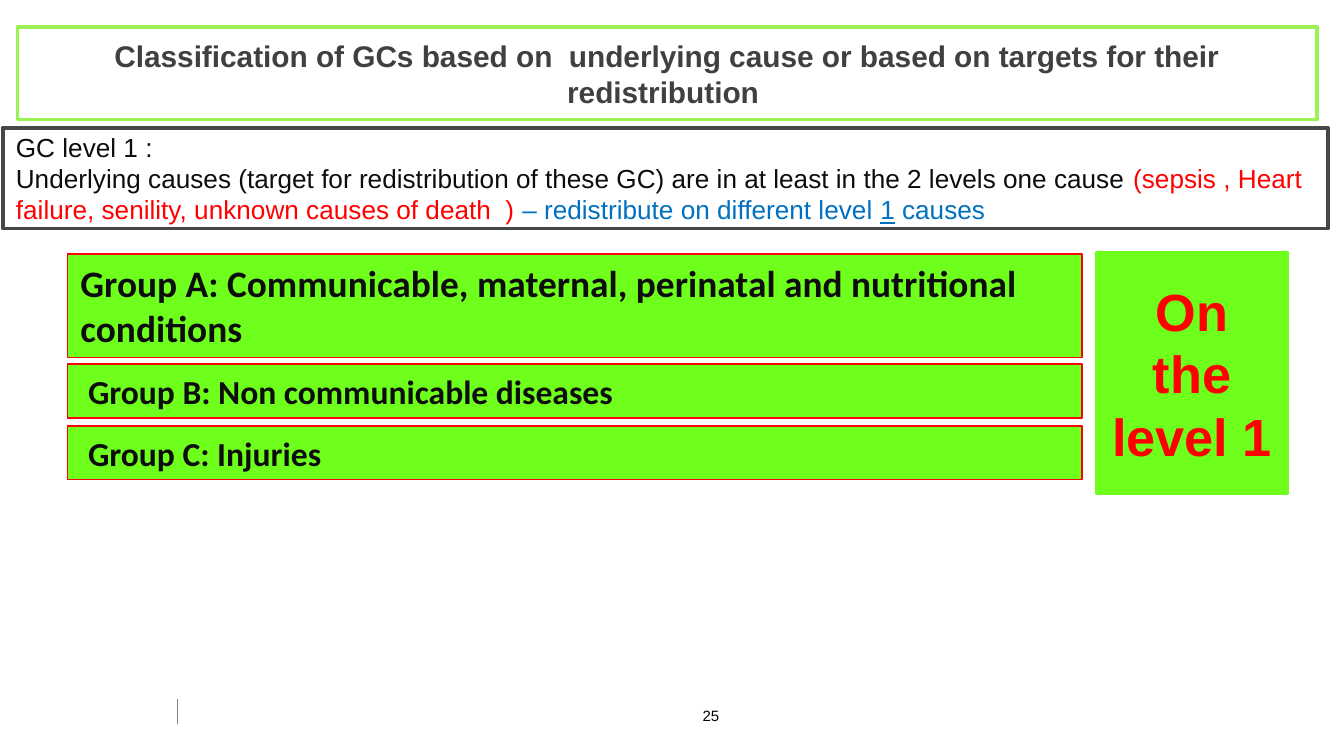
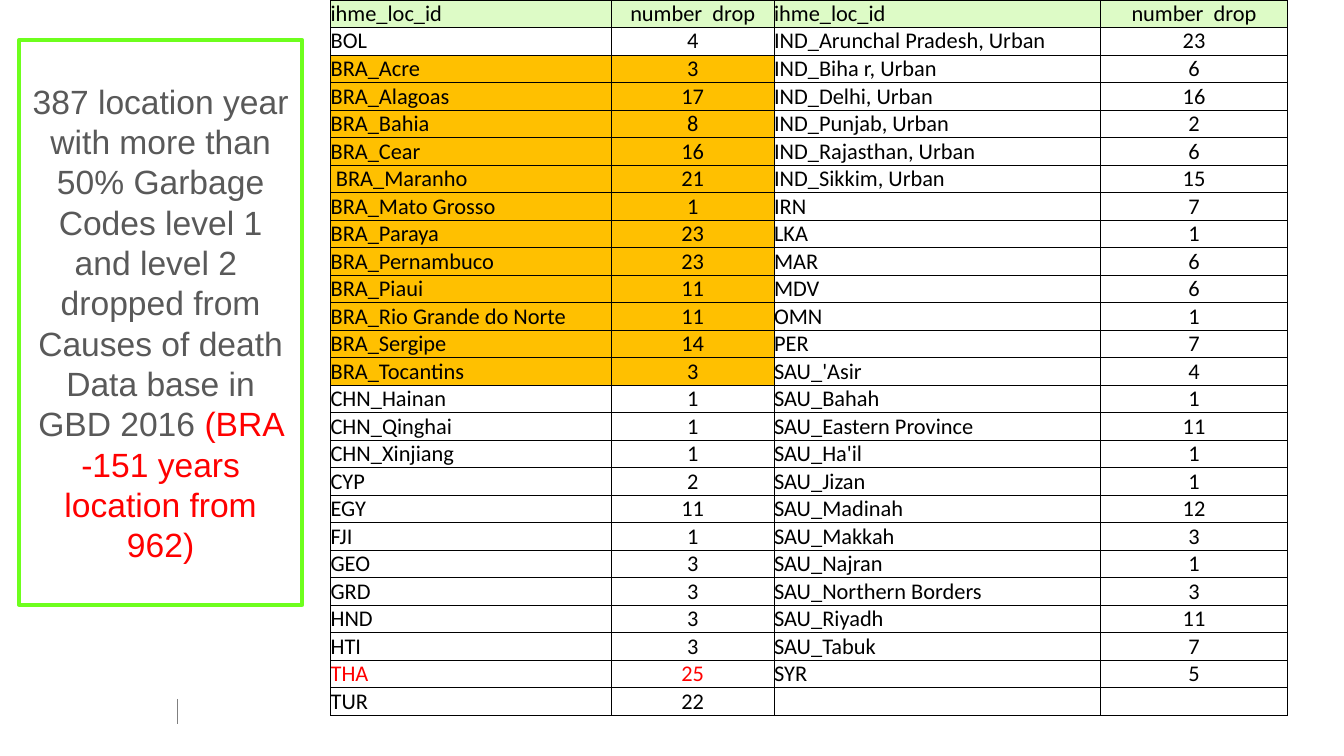
from dataclasses import dataclass
from itertools import zip_longest

from lxml import etree
from pptx import Presentation
from pptx import util as u
from pptx.dml.color import RGBColor
from pptx.enum import shapes, text
from pptx.oxml import ns

PX = 4572
WHITE, BLACK, INK, RED = "FFFFFF", "000000", "0D0D0D", "FF0000"
LIME, GOLD, MINT, BLUE = "6EFF1D", "FFC000", "DDFBC6", "0070C0"
LEFT, MID = text.PP_ALIGN.LEFT, text.PP_ALIGN.CENTER
TOP, CORE, BASE = (text.MSO_ANCHOR.TOP, text.MSO_ANCHOR.MIDDLE,
                   text.MSO_ANCHOR.BOTTOM)


@dataclass(frozen=True)
class Run:
    words: str
    hue: str = ""
    under: bool = False


@dataclass(frozen=True)
class Box:
    left: int
    top: int
    width: int
    height: int
    fill: str
    edge: str
    weight: float = 2


@dataclass(frozen=True)
class Group:
    words: str
    top: int
    height: int
    size: int
    inset: int


GROUPS = [
    Group("Group A: Communicable, maternal, perinatal and nutritional conditions",
          378, 154, 20, 20),
    Group("Group B: Non communicable diseases", 542, 80, 18, 31),
    Group("Group C: Injuries", 634, 80, 18, 31),
]

HEAD = ("ihme_loc_id", "number  drop")
FIRST = [
    ("BOL", 4), ("BRA_Acre", 3), ("BRA_Alagoas", 17), ("BRA_Bahia", 8),
    ("BRA_Cear", 16), ("BRA_Maranho", 21), ("BRA_Mato Grosso", 1),
    ("BRA_Paraya", 23), ("BRA_Pernambuco", 23), ("BRA_Piaui", 11),
    ("BRA_Rio Grande do Norte", 11), ("BRA_Sergipe", 14),
    ("BRA_Tocantins", 3), ("CHN_Hainan", 1), ("CHN_Qinghai", 1),
    ("CHN_Xinjiang", 1), ("CYP", 2), ("EGY", 11), ("FJI", 1), ("GEO", 3),
    ("GRD", 3), ("HND", 3), ("HTI", 3), ("THA", 25), ("TUR", 22),
]
LAST = [
    ("IND_Arunchal Pradesh, Urban", 23), ("IND_Biha r, Urban", 6),
    ("IND_Delhi, Urban", 16), ("IND_Punjab, Urban", 2),
    ("IND_Rajasthan, Urban", 6), ("IND_Sikkim, Urban", 15), ("IRN", 7),
    ("LKA", 1), ("MAR", 6), ("MDV", 6), ("OMN", 1), ("PER", 7),
    ("SAU_'Asir", 4), ("SAU_Bahah", 1), ("SAU_Eastern Province", 11),
    ("SAU_Ha'il", 1), ("SAU_Jizan", 1), ("SAU_Madinah", 12),
    ("SAU_Makkah", 3), ("SAU_Najran", 1), ("SAU_Northern Borders", 3),
    ("SAU_Riyadh", 11), ("SAU_Tabuk", 7), ("SYR", 5),
]
COLS = [418, 242, 486, 278]
ROW = 41


def px(count: int) -> u.Emu:
    return u.Emu(count * PX)


def paint(form, code: str) -> None:
    if hasattr(form, "solid"):
        form.solid()
        form.fore_color.rgb = RGBColor.from_string(code)
    else:
        form.rgb = RGBColor.from_string(code)


def write(frame, *paras: list[Run], size: int, hue: str = BLACK,
          font: str = "Arial", bold: bool = False, align=LEFT) -> None:
    for at, runs in enumerate(paras):
        para = frame.add_paragraph() if at else frame.paragraphs[0]
        para.alignment = align
        for item in runs:
            run = para.add_run()
            run.text = item.words
            run.font.name = font
            run.font.size = u.Pt(size)
            run.font.bold = bold
            if item.under:
                run.font.underline = True
            paint(run.font.color, item.hue or hue)
        if not runs:
            etree.SubElement(para._p, ns.qn("a:endParaRPr"), sz=str(size * 100))


def draw(slide, box: Box, *paras: list[Run], anchor=CORE, grow: bool = False,
         inset: int = 20, **form) -> None:
    shape = slide.shapes.add_shape(
        shapes.MSO_SHAPE.RECTANGLE, px(box.left), px(box.top),
        px(box.width), px(box.height))
    shape.shadow.inherit = False
    paint(shape.fill, box.fill)
    paint(shape.line.fill, box.edge)
    shape.line.width = u.Pt(box.weight)
    frame = shape.text_frame
    frame.word_wrap = True
    frame.vertical_anchor = anchor
    frame.margin_left = px(inset)
    if grow:
        frame.auto_size = text.MSO_AUTO_SIZE.SHAPE_TO_FIT_TEXT
    write(frame, *paras, **form)


def start(deck):
    slide = deck.slides.add_slide(deck.slide_layouts[6])
    rule = slide.shapes.add_connector(
        shapes.MSO_CONNECTOR.STRAIGHT, px(264), px(1040), px(264), px(1078))
    paint(rule.line.fill, "808080")
    rule.line.width = u.Pt(0.25)
    etree.SubElement(rule._element.spPr, ns.qn("a:effectLst"))
    return slide


def page(slide, label: str) -> None:
    box = slide.shapes.add_textbox(px(1024), px(1042), px(68), px(48))
    box.text_frame.word_wrap = False
    box.text_frame.auto_size = text.MSO_AUTO_SIZE.SHAPE_TO_FIT_TEXT
    write(box.text_frame, [Run(label)], size=8, align=MID)


def frame_cell(cell) -> None:
    props = cell._tc.get_or_add_tcPr()
    for at, side in enumerate("LRTB"):
        line = etree.Element(ns.qn(f"a:ln{side}"), w=str(u.Pt(0.5)))
        fill = etree.SubElement(line, ns.qn("a:solidFill"))
        etree.SubElement(fill, ns.qn("a:srgbClr"), val=BLACK)
        props.insert(at, line)


def shade(row: int, name: str) -> str:
    if row == 0:
        return MINT
    return GOLD if name.startswith("BRA") else WHITE


def fill_cell(cell, value, fill: str, hue: str, align) -> None:
    cell.margin_left = px(8 if value == "BRA_Maranho" else 0)
    cell.margin_right = cell.margin_top = cell.margin_bottom = 0
    cell.vertical_anchor = BASE
    paint(cell.fill, fill)
    frame_cell(cell)
    runs = [] if value == "" else [Run(str(value))]
    write(cell.text_frame, runs, size=12, hue=hue, font="Calibri", align=align)


def tally(slide) -> None:
    rows = [(HEAD, HEAD), *zip_longest(FIRST, LAST, fillvalue=("", ""))]
    grid = slide.shapes.add_table(
        len(rows), len(COLS), px(492), px(0), px(sum(COLS)),
        px(ROW * len(rows))).table
    grid.first_row = grid.horz_banding = False
    for col, width in zip(grid.columns, COLS):
        col.width = px(width)
    for at, pairs in enumerate(rows):
        grid.rows[at].height = px(ROW)
        for half, (name, count) in enumerate(pairs):
            fill = shade(at, name)
            hue = RED if name == "THA" else BLACK
            fill_cell(grid.cell(at, half * 2), name, fill, hue, LEFT)
            fill_cell(grid.cell(at, half * 2 + 1), count, fill, hue, MID)


def levels(deck) -> None:
    slide = start(deck)
    page(slide, "25")
    draw(slide, Box(4, 190, 1972, 150, WHITE, "474747"),
         [Run("GC level 1 :")],
         [Run("Underlying causes (target for redistribution of these GC) "
              "are in at least in the 2 levels one cause "),
          Run("(sepsis , Heart failure, senility, "
              "unknown causes of death  ) ", RED),
          Run("– redistribute on different level ", BLUE),
          Run("1", BLUE, True), Run(" causes", BLUE)],
         size=14, hue=INK)
    draw(slide, Box(26, 40, 1934, 138, WHITE, "9AF253"),
         [Run("Classification of GCs based on  underlying cause or based on "
              "targets for their redistribution ")],
         size=16, hue="404040", bold=True, align=MID)
    for item in GROUPS:
        draw(slide, Box(100, item.top, 1510, item.height, LIME, RED, 0.75),
             [Run(item.words)], anchor=TOP, grow=True, inset=item.inset,
             size=item.size, hue=INK, font="Calibri", bold=True)
    draw(slide, Box(1632, 376, 284, 358, LIME, LIME),
         [Run("On the level 1")], size=28, hue=RED, bold=True, align=MID)


def drops(deck) -> None:
    slide = start(deck)
    tally(slide)
    draw(slide, Box(28, 60, 422, 840, WHITE, LIME),
         [Run("387 location year with more than 50% Garbage Codes level 1 "
              "and level 2  dropped from Causes of death Data base in "
              "GBD 2016 "),
          Run("(BRA -151 years location from 962)", RED)],
         size=18, hue="595959", align=MID)


def main() -> None:
    deck = Presentation()
    deck.slide_width, deck.slide_height = px(2000), px(1125)
    levels(deck)
    drops(deck)
    deck.save("out.pptx")


if __name__ == "__main__":
    main()
